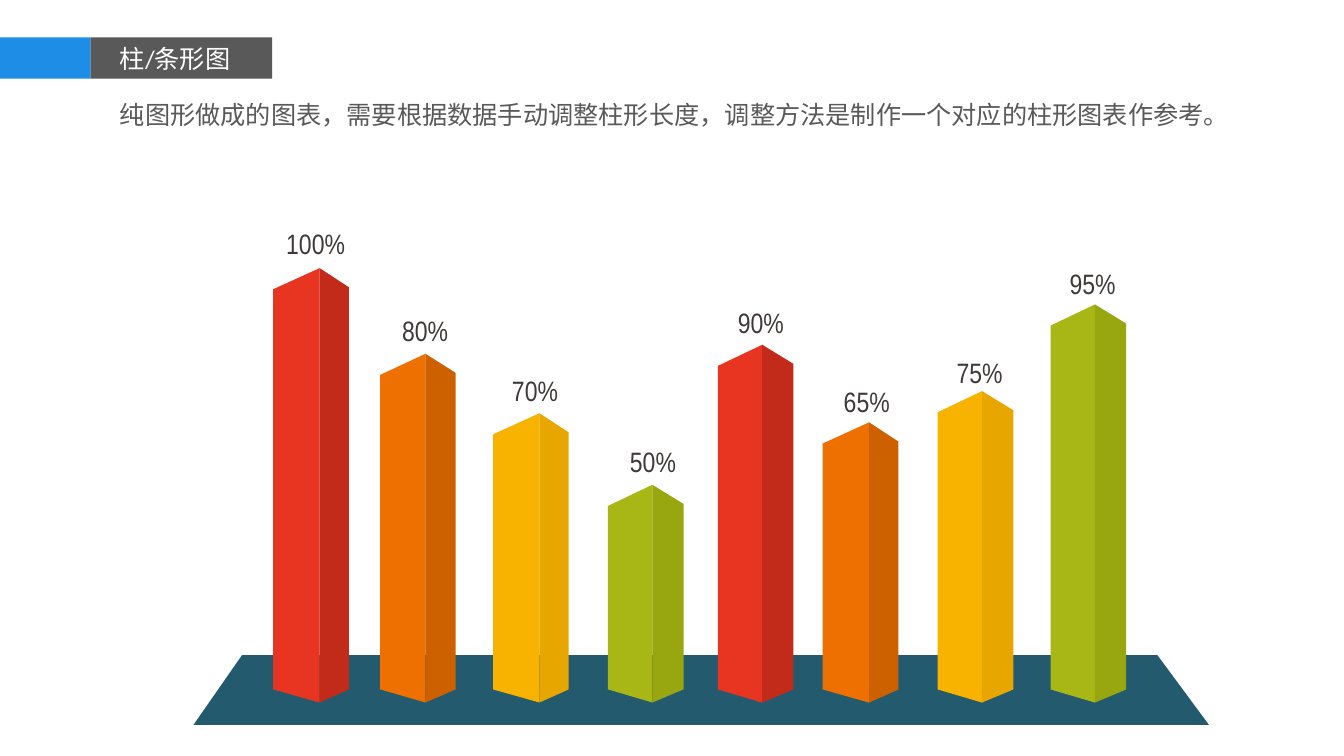
from dataclasses import dataclass

from pptx import Presentation
from pptx.dml.color import RGBColor
from pptx.enum.shapes import MSO_SHAPE
from pptx.enum.text import MSO_AUTO_SIZE
from pptx.shapes.autoshape import Shape
from pptx.slide import Slide
from pptx.util import Inches, Pt

COLORS = {
    "blue": "1D8DE5", "gray": "595959", "white": "FFFFFF",
    "floor": "245A6E", "label": "3E3A39",
    "red": "E83522", "red_side": "C22A19",
    "orange": "ED7000", "orange_side": "CD6100",
    "yellow": "F8B200", "yellow_side": "E8A700",
    "green": "A8B715", "green_side": "98A610",
}
HEADING = {"size": Pt(18), "name": "Calibri"}
PERCENT = {"size": Pt(20), "name": "Arial Narrow"}
BASE = 6.97
CORNER = 6.84
FRONT_DROP = 0.21
SIDE_DROP = 0.19


@dataclass
class Column:
    percent: int
    color: str
    left: float
    ridge: float
    right: float
    top: float
    label_left: float
    label_top: float


@dataclass
class Band:
    left: float
    width: float
    color: str


COLUMNS = [
    Column(100, "red", 2.71, 3.17, 3.46, 2.66, 2.74, 2.2),
    Column(80, "orange", 3.77, 4.22, 4.52, 3.51, 3.89, 3.06),
    Column(70, "yellow", 4.89, 5.35, 5.64, 4.1, 4.98, 3.66),
    Column(50, "green", 6.03, 6.47, 6.78, 4.81, 6.15, 4.36),
    Column(90, "red", 7.12, 7.56, 7.87, 3.42, 7.22, 2.98),
    Column(65, "orange", 8.16, 8.62, 8.91, 4.19, 8.27, 3.77),
    Column(75, "yellow", 9.3, 9.74, 10.05, 3.88, 9.39, 3.48),
    Column(95, "green", 10.42, 10.86, 11.17, 3.02, 10.51, 2.59),
]
BANDS = [Band(0, 0.9, "blue"), Band(0.9, 1.8, "gray")]


def paint(shape: Shape, color: str) -> None:
    shape.shadow.inherit = False
    shape.fill.solid()
    shape.fill.fore_color.rgb = RGBColor.from_string(COLORS[color])
    shape.line.fill.background()


def draw_band(slide: Slide, band: Band) -> None:
    strip = slide.shapes.add_shape(
        MSO_SHAPE.RECTANGLE, Inches(band.left), Inches(0.37), Inches(band.width), Inches(0.41)
    )
    paint(strip, band.color)


def draw_face(slide: Slide, corners: list[tuple[float, float]], color: str) -> None:
    points = [(Inches(x), Inches(y)) for x, y in corners]
    outline = slide.shapes.build_freeform(*points[0], scale=1.0)
    outline.add_line_segments(points[1:], close=True)
    paint(outline.convert_to_shape(), color)


def draw_text(slide: Slide, text: str, left: float, top: float, width: float,
              height: float, style: dict, color: str) -> None:
    box = slide.shapes.add_textbox(Inches(left), Inches(top), Inches(width), Inches(height))
    box.text_frame.word_wrap = False
    box.text_frame.auto_size = MSO_AUTO_SIZE.SHAPE_TO_FIT_TEXT
    run = box.text_frame.paragraphs[0].add_run()
    run.text = text
    for attribute, value in style.items():
        setattr(run.font, attribute, value)
    run.font.color.rgb = RGBColor.from_string(COLORS[color])


def draw_column(slide: Slide, column: Column) -> None:
    faces = [
        (column.left, FRONT_DROP, column.color),
        (column.right, SIDE_DROP, f"{column.color}_side"),
    ]
    for edge, drop, color in faces:
        corners = [(column.ridge, BASE), (edge, CORNER),
                   (edge, column.top + drop), (column.ridge, column.top)]
        draw_face(slide, corners, color)


def draw_label(slide: Slide, column: Column) -> None:
    text = f"{column.percent}%"
    width = 0.37 + 0.11 * len(text)
    draw_text(slide, text, column.label_left, column.label_top, width, 0.44, PERCENT, "label")


def main() -> None:
    presentation = Presentation()
    presentation.slide_width = Inches(13.33)
    presentation.slide_height = Inches(7.5)
    slide = presentation.slides.add_slide(presentation.slide_layouts[6])

    for band in BANDS:
        draw_band(slide, band)
    draw_text(slide, "柱/条形图", 1.09, 0.38, 1.5, 0.4, HEADING, "white")
    draw_face(slide, [(11.99, 7.19), (1.92, 7.19), (2.4, 6.5), (11.48, 6.5)], "floor")
    for column in COLUMNS:
        draw_column(slide, column)
    for column in COLUMNS:
        draw_label(slide, column)
    draw_text(
        slide,
        "纯图形做成的图表，需要根据数据手动调整柱形长度，调整方法是制作一个对应的柱形图表作参考。",
        1.09, 0.94, 11.31, 0.4, HEADING, "gray",
    )
    presentation.save("out.pptx")


if __name__ == "__main__":
    main()
